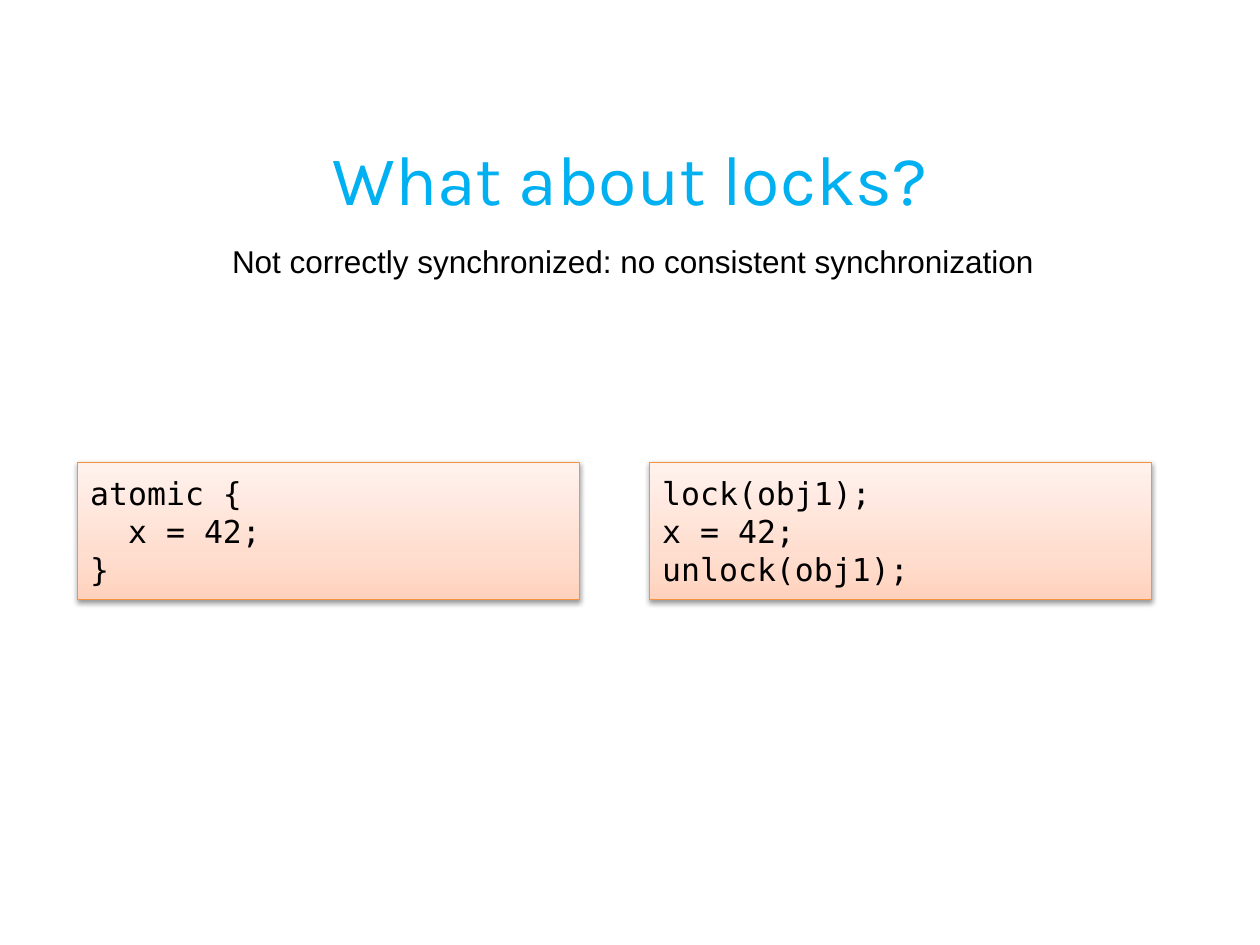
import pptx
import pptx.dml.color
import pptx.enum.shapes
import pptx.enum.text
import pptx.oxml
import pptx.oxml.ns
import pptx.util
from pptx.util import Cm

TITLE = "What about locks?"
SUBTITLE = "Not correctly synchronized: no consistent synchronization"
CODE_BLOCKS = [
    ["atomic {", "  x = 42;", "}"],
    ["lock(obj1);", "x = 42;", "unlock(obj1);"],
]
COLORS = {"title": "00B0F0", "text": "000000", "border": "F69240", "shadow": "000000"}
GRADIENT_STOPS = [(0, "FFD2BD"), (35, "FFDED0"), (100, "FFF2ED")]

CODE_LEFT, CODE_TOP = Cm(1.57), Cm(9.32)
CODE_WIDTH, CODE_HEIGHT = Cm(10.11), Cm(2.77)
CODE_GAP = Cm(1.42)


def rgb(name):
    return pptx.dml.color.RGBColor.from_string(COLORS[name])


def write_lines(shape, lines, font_name, size, color, alignment, anchor, wrap=True):
    frame = shape.text_frame
    frame.word_wrap = wrap
    frame.vertical_anchor = anchor
    frame.text = "\n".join(lines)
    for paragraph in frame.paragraphs:
        paragraph.alignment = alignment
        paragraph.font.name = font_name
        paragraph.font.size = pptx.util.Pt(size)
        paragraph.font.color.rgb = rgb(color)


def fill_gradient(shape):
    shape.fill.gradient()
    shape.fill.gradient_angle = 90
    stop_list = shape.element.spPr.find(".//" + pptx.oxml.ns.qn("a:gsLst"))
    stop_list.clear()
    for position, color in GRADIENT_STOPS:
        stop_list.append(pptx.oxml.parse_xml(
            f'<a:gs {pptx.oxml.ns.nsdecls("a")} pos="{position * 1000}">'
            f'<a:srgbClr val="{color}"/></a:gs>'))


def add_shadow(shape):
    shape.shadow.inherit = False
    effects = shape.element.spPr.find(pptx.oxml.ns.qn("a:effectLst"))
    effects.append(pptx.oxml.parse_xml(
        f'<a:outerShdw {pptx.oxml.ns.nsdecls("a")} blurRad="{pptx.util.Pt(3.1)}" '
        f'dist="{pptx.util.Pt(1.6)}" dir="5400000" rotWithShape="0">'
        f'<a:srgbClr val="{COLORS["shadow"]}"><a:alpha val="38000"/></a:srgbClr>'
        '</a:outerShdw>'))


def add_code_block(slide, index, lines):
    left = CODE_LEFT + index * (CODE_WIDTH + CODE_GAP)
    block = slide.shapes.add_shape(
        pptx.enum.shapes.MSO_SHAPE.RECTANGLE, left, CODE_TOP, CODE_WIDTH, CODE_HEIGHT)
    fill_gradient(block)
    block.line.color.rgb = rgb("border")
    block.line.width = pptx.util.Pt(0.75)
    add_shadow(block)
    write_lines(block, lines, "DejaVu Sans Mono", 18, "text", Align.LEFT, Anchor.MIDDLE)


Align = pptx.enum.text.PP_ALIGN
Anchor = pptx.enum.text.MSO_ANCHOR

presentation = pptx.Presentation()
presentation.slide_width, presentation.slide_height = Cm(25.4), Cm(19.05)
slide = presentation.slides.add_slide(presentation.slide_layouts[6])

title = slide.shapes.add_textbox(Cm(1.27), Cm(1.98), Cm(22.86), Cm(3.18))
write_lines(title, [TITLE], "Karla", 40, "title", Align.CENTER, Anchor.MIDDLE)

for index, lines in enumerate(CODE_BLOCKS):
    add_code_block(slide, index, lines)

subtitle = slide.shapes.add_textbox(Cm(4.34), Cm(4.75), Cm(16.84), Cm(1.02))
write_lines(subtitle, [SUBTITLE], "Arial", 18, "text", Align.CENTER, Anchor.TOP, wrap=False)
subtitle.text_frame.auto_size = pptx.enum.text.MSO_AUTO_SIZE.SHAPE_TO_FIT_TEXT

presentation.save("out.pptx")
